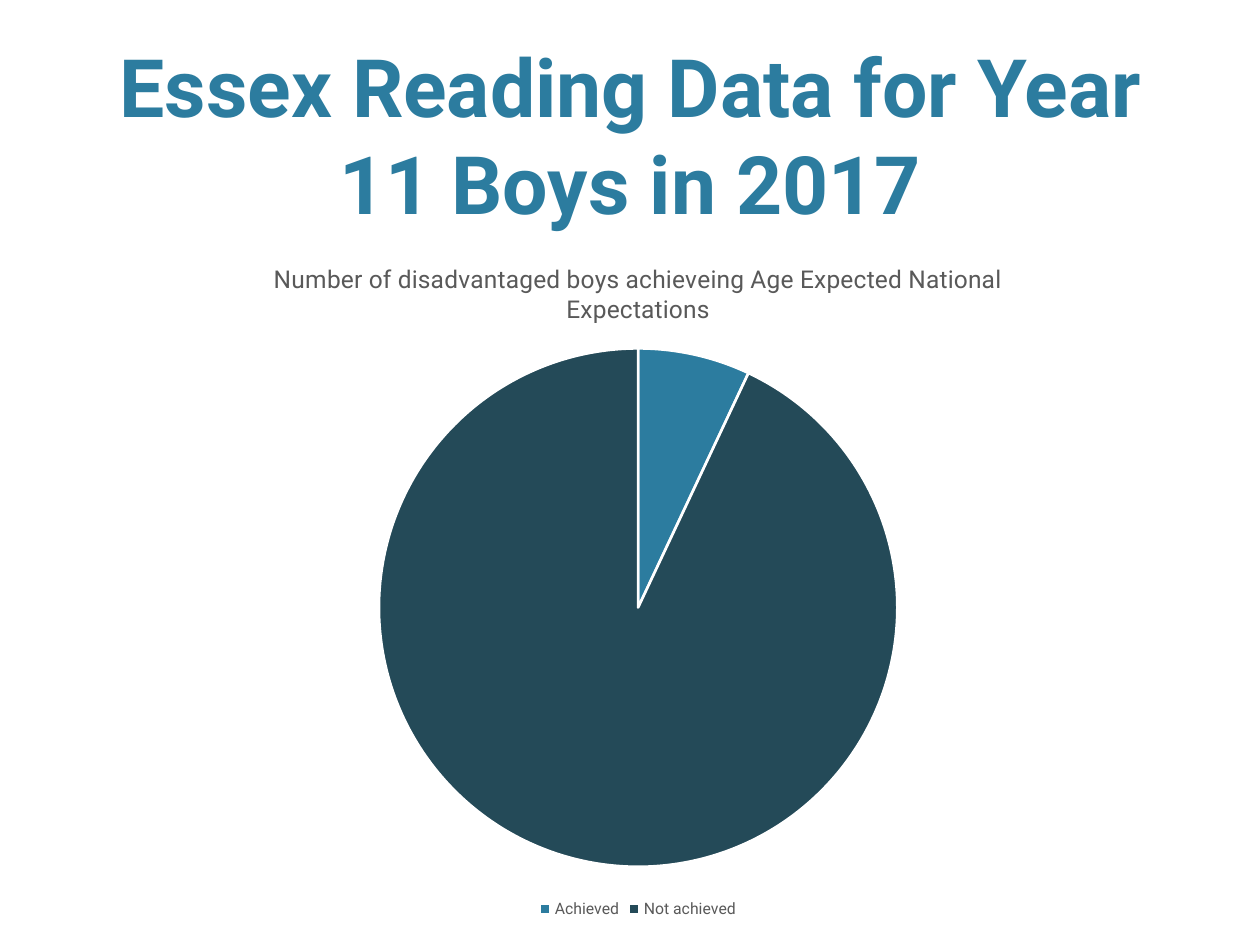
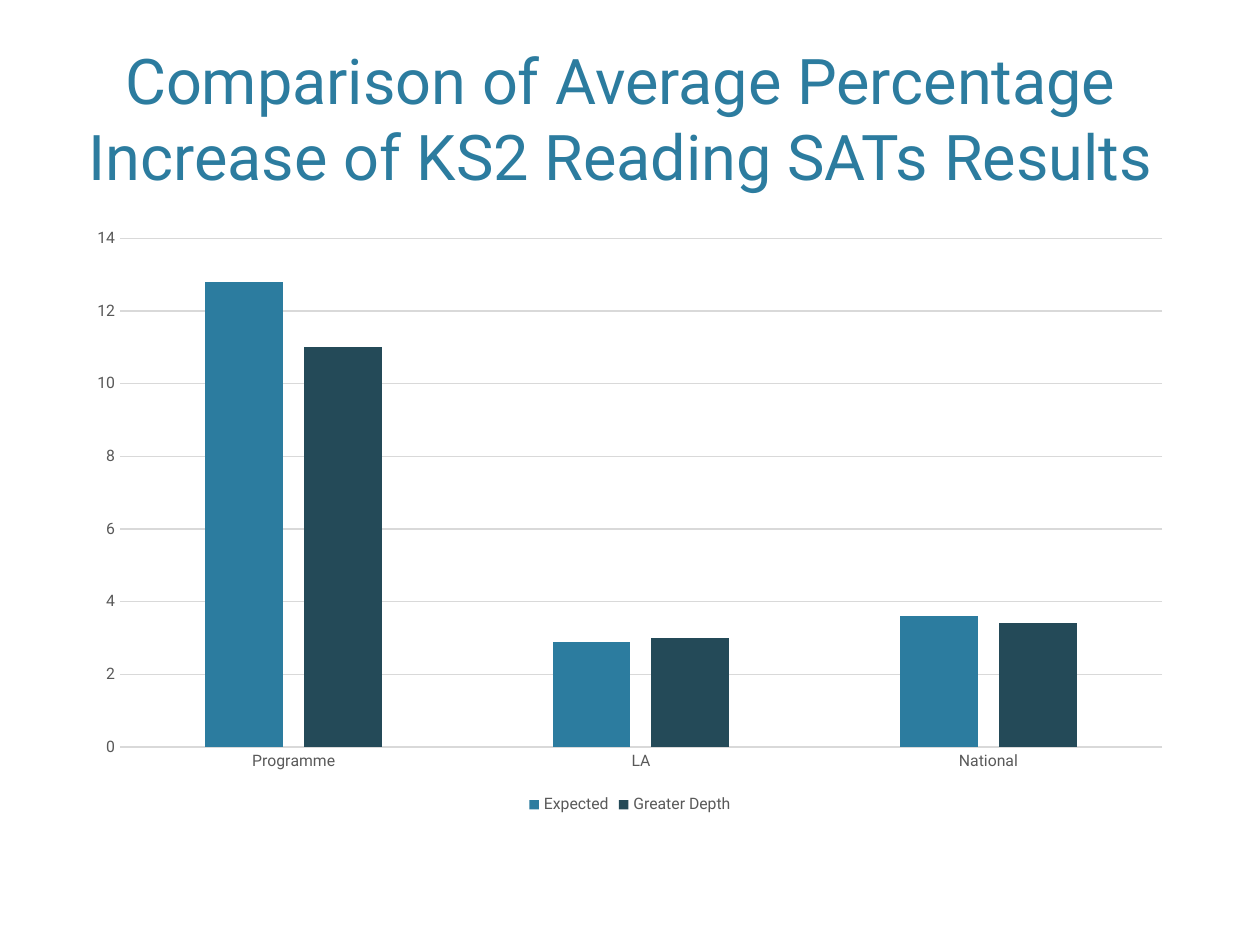
from lxml import etree
from pptx import Presentation, util as u
from pptx.chart.data import CategoryChartData
from pptx.dml.color import RGBColor
from pptx.enum import chart as ch, text
from pptx.oxml.ns import qn

PX = 9144
FONT = "Roboto"
COLORS = {
    "blue": "2C7C9F",
    "navy": "244A58",
    "label": "595959",
    "grid": "D9D9D9",
    "white": "FFFFFF",
}


def rgb(name):
    return RGBColor.from_string(COLORS[name])


class SlideBuilder:
    series_colors = ("blue", "navy")

    def __init__(self, deck):
        self.deck = deck
        self.page = None

    def new_page(self):
        self.page = self.deck.slides.add_slide(self.deck.slide_layouts[5])

    def set_font(self, font, size, color, bold=False):
        font.name, font.size, font.bold = FONT, u.Pt(size), bold
        font.color.rgb = rgb(color)

    def fill(self, target, color):
        target.format.fill.solid()
        target.format.fill.fore_color.rgb = rgb(color)

    def line(self, line_format, color, width):
        line_format.color.rgb = rgb(color)
        line_format.width = u.Pt(width)

    def title(self, words, left, top, width, height, size, bold=False):
        box = self.page.shapes.title
        box.left, box.top, box.width, box.height = (
            n * PX for n in (left, top, width, height))
        frame = box.text_frame
        frame.text = words
        frame.word_wrap = True
        frame.auto_size = text.MSO_AUTO_SIZE.NONE
        frame.vertical_anchor = text.MSO_ANCHOR.BOTTOM
        para = frame.paragraphs[0]
        para.alignment = text.PP_ALIGN.CENTER
        self.set_font(para.font, size, "blue", bold)

    def chart(self, kind, categories, series, area, plot_area):
        data = CategoryChartData()
        data.categories = categories
        for name, values in series.items():
            data.add_series(name, values)
        chart = self.page.shapes.add_chart(
            kind, *(n * PX for n in area), data).chart
        chart.font.name, chart.font.size = FONT, u.Pt(10)
        chart.has_title = False
        chart.has_legend = True
        chart.legend.position = ch.XL_LEGEND_POSITION.BOTTOM
        chart.legend.include_in_layout = False
        self.set_font(chart.legend.font, 9, "label")
        self.place_plot(chart, plot_area)
        return chart

    def place_plot(self, chart, fractions):
        plot_area = chart.element.find(".//" + qn("c:plotArea"))
        for old in plot_area.findall(qn("c:layout")):
            plot_area.remove(old)
        layout = etree.Element(qn("c:layout"))
        manual = etree.SubElement(layout, qn("c:manualLayout"))
        settings = [("layoutTarget", "inner"), ("xMode", "edge"), ("yMode", "edge")]
        settings += zip("xywh", fractions)
        for tag, value in settings:
            etree.SubElement(manual, qn("c:" + tag)).set("val", str(value))
        plot_area.insert(0, layout)

    def pie(self, heading, categories, series, area, plot_area):
        chart = self.chart(ch.XL_CHART_TYPE.PIE, categories, series, area, plot_area)
        chart.has_title = True
        frame = chart.chart_title.text_frame
        frame.text = heading
        self.set_font(frame.paragraphs[0].font, 14, "label")
        plot = chart.plots[0]
        plot.vary_by_categories = True
        for index, color in enumerate(self.series_colors):
            point = plot.series[0].points[index]
            self.fill(point, color)
            self.line(point.format.line, "white", 1.5)

    def columns(self, categories, series, area, plot_area, top_value, step):
        chart = self.chart(ch.XL_CHART_TYPE.COLUMN_CLUSTERED, categories, series,
                           area, plot_area)
        plot = chart.plots[0]
        plot.vary_by_categories = False
        plot.gap_width, plot.overlap = 219, -27
        for column, color in zip(plot.series, self.series_colors):
            self.fill(column, color)
        for axis in (chart.category_axis, chart.value_axis):
            axis.major_tick_mark = axis.minor_tick_mark = ch.XL_TICK_MARK.NONE
            self.set_font(axis.tick_labels.font, 9, "label")
        self.line(chart.category_axis.format.line, "grid", 0.75)
        scale = chart.value_axis
        scale.minimum_scale, scale.maximum_scale = 0, top_value
        scale.major_unit = step
        scale.has_major_gridlines = True
        scale.format.line.fill.background()
        self.line(scale.major_gridlines.format.line, "grid", 0.75)


def main():
    deck = Presentation()
    deck.slide_width, deck.slide_height = 1000 * PX, 750 * PX
    builder = SlideBuilder(deck)

    builder.new_page()
    builder.title("Essex Reading Data for Year 11 Boys in 2017",
                  60, 42, 880, 146, 46, bold=True)
    builder.pie("Number of disadvantaged boys achieveing Age Expected National Expectations",
                ("Achieved", "Not achieved"), {"Series 1": (7, 93)},
                (95, 188, 823, 545), (0.25, 0.16, 0.5, 0.76))

    builder.new_page()
    builder.title("Comparison of Average Percentage Increase of KS2 Reading SATs Results",
                  19, 12, 947, 146, 36)
    builder.columns(("Programme", "LA", "National"),
                    {"Expected": (12.8, 2.9, 3.6), "Greater Depth": (11, 3, 3.4)},
                    (60, 175, 880, 475), (0.04, 0.03, 0.94, 0.85), 14, 2)

    deck.save("out.pptx")


if __name__ == "__main__":
    main()
